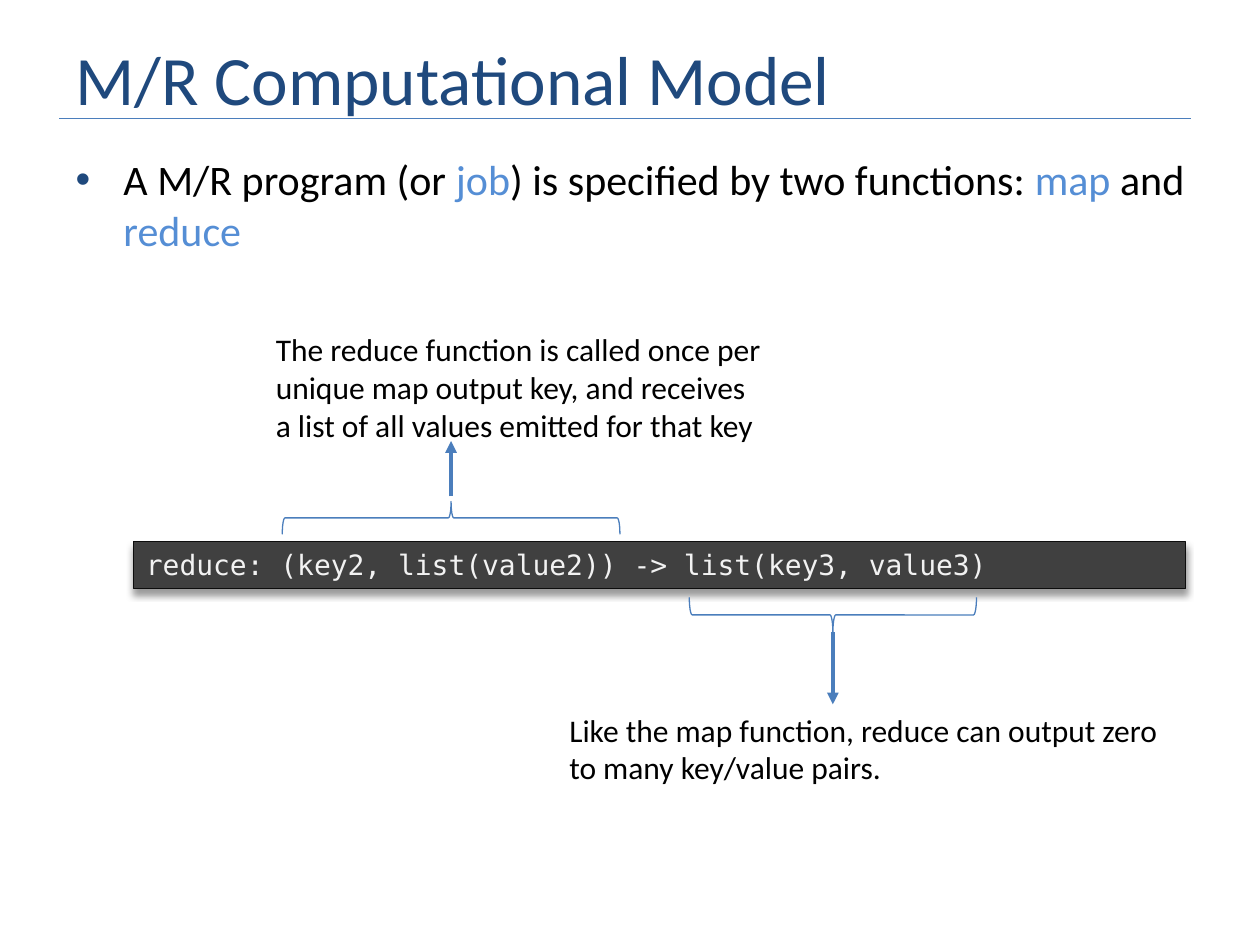
from lxml import etree
from pptx import Presentation
from pptx.dml.color import RGBColor
from pptx.enum.shapes import MSO_CONNECTOR, MSO_SHAPE
from pptx.enum.text import MSO_ANCHOR, MSO_AUTO_SIZE, PP_ALIGN
from pptx.oxml import parse_xml
from pptx.oxml.ns import nsdecls, qn
from pptx.util import Pt

STRAIGHT = MSO_CONNECTOR.STRAIGHT
RECT, BRACE = MSO_SHAPE.RECTANGLE, MSO_SHAPE.RIGHT_BRACE
TOP, MIDDLE = MSO_ANCHOR.TOP, MSO_ANCHOR.MIDDLE
LEFT, JUSTIFY = PP_ALIGN.LEFT, PP_ALIGN.JUSTIFY
GROW, NO_FIT = MSO_AUTO_SIZE.SHAPE_TO_FIT_TEXT, MSO_AUTO_SIZE.NONE
PX = 9144  # 100 px to the inch

COLORS = {
    "title": "1F497D", "text": "000000", "accent": "558ED5", "line": "4B7EBC",
    "code_fill": "404040", "code_line": "0D0D0D", "code_text": "F2F2F2",
}


def write(tf, *runs, size=18, font="Calibri", color="text",
          align=LEFT, anchor=TOP, fit=GROW):
    """Fill a text frame; a run is a string or a (string, color) pair."""
    tf.word_wrap = True
    tf.auto_size = fit
    tf.vertical_anchor = anchor
    p = tf.paragraphs[0]
    p.alignment = align
    for run in runs:
        text, shade = (run, color) if isinstance(run, str) else run
        r = p.add_run()
        r.text = text
        r.font.size = Pt(size)
        r.font.name = font
        r.font.color.rgb = RGBColor.from_string(COLORS[shade])
    return p


def add_line(x1, y1, x2, y2, width, arrow=False):
    """Draw a straight line, with an arrowhead at its end on request."""
    line = s.shapes.add_connector(STRAIGHT, x1 * PX, y1 * PX, x2 * PX, y2 * PX)
    line.line.color.rgb = RGBColor.from_string(COLORS["line"])
    line.line.width = Pt(width)
    sp_pr = line._element.spPr
    if arrow:
        etree.SubElement(sp_pr.find(qn("a:ln")), qn("a:tailEnd"), type="triangle")
    etree.SubElement(sp_pr, qn("a:effectLst"))


prs = Presentation()
prs.slide_width, prs.slide_height = 1000 * PX, 750 * PX
s = prs.slides.add_slide(prs.slide_layouts[1])

# Title and the rule under it
add_line(47, 94, 945, 94, 0.75)
title, body = s.placeholders
title.left, title.top, title.width, title.height = (v * PX for v in (50, 30, 900, 64))
write(title.text_frame, "M/R Computational Model",
      size=39.6, color="title", anchor=MIDDLE, fit=NO_FIT)

# Bullet
body.left, body.top, body.width, body.height = (v * PX for v in (50, 117, 900, 553))
p = write(body.text_frame, "A M/R program (or ", ("job", "accent"),
          ") is specified by two functions: ", ("map", "accent"),
          " and ", ("reduce", "accent"), size=24, align=JUSTIFY, fit=NO_FIT)
p_pr = p._p.get_or_add_pPr()
p_pr.set("marL", str(38 * PX))
p_pr.set("indent", str(-38 * PX))
bullet_color = etree.SubElement(p_pr, qn("a:buClr"))
etree.SubElement(bullet_color, qn("a:srgbClr"), val=COLORS["title"])
etree.SubElement(p_pr, qn("a:buFont"), typeface="Arial")
etree.SubElement(p_pr, qn("a:buChar"), char="•")

# Code bar with a soft shadow below
code = s.shapes.add_shape(RECT, 106 * PX, 430 * PX, 835 * PX, 37 * PX)
code.fill.solid()
code.fill.fore_color.rgb = RGBColor.from_string(COLORS["code_fill"])
code.line.color.rgb = RGBColor.from_string(COLORS["code_line"])
code.line.width = Pt(0.75)
code._element.spPr.append(parse_xml(
    f'<a:effectLst {nsdecls("a")}>'
    f'<a:outerShdw blurRad="{Pt(4)}" dist="{Pt(3)}" dir="5400000" rotWithShape="0">'
    '<a:srgbClr val="000000"><a:alpha val="40000"/></a:srgbClr>'
    '</a:outerShdw></a:effectLst>'))
write(code.text_frame, "reduce: (key2, list(value2)) -> list(key3, value3)",
      size=16, font="DejaVu Sans Mono", color="code_text")

# Notes on the input and the output
notes = [
    (209, 257, 408, 101, "The reduce function is called once per unique map output key, "
                         "and receives a list of all values emitted for that key"),
    (442, 559, 501, 71, "Like the map function, reduce can output zero "
                        "to many key/value pairs."),
]
for x, y, w, h, text in notes:
    box = s.shapes.add_textbox(x * PX, y * PX, w * PX, h * PX)
    write(box.text_frame, text)

# Braces around the arguments and the result, each with an arrow to its note
braces = [
    (345, 277, 26, 268, 270, (358, 394, 358, 350)),
    (647, 374, 28, 228, 90, (661, 502, 661, 559)),
]
for x, y, w, h, rotation, arrow in braces:
    brace = s.shapes.add_shape(BRACE, x * PX, y * PX, w * PX, h * PX)
    brace.rotation = rotation
    brace.shadow.inherit = False
    brace.fill.background()
    brace.line.color.rgb = RGBColor.from_string(COLORS["line"])
    brace.line.width = Pt(0.75)
    add_line(*arrow, 2.25, arrow=True)

prs.save("out.pptx")
